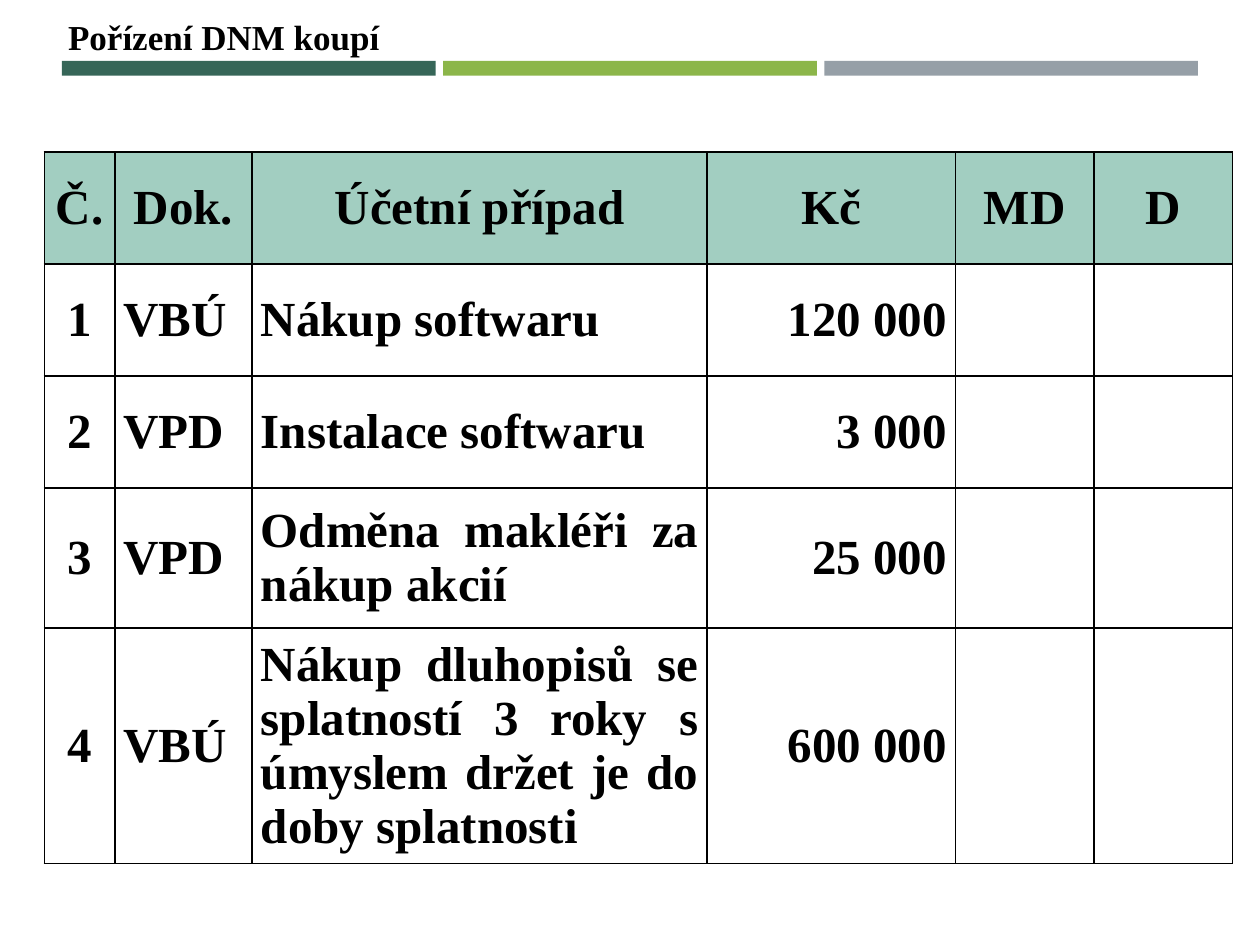
from pptx import Presentation
from pptx import util as u
from pptx.dml.color import RGBColor
from pptx.enum import shapes, text
from pptx.oxml import parse_xml
from pptx.oxml.ns import nsdecls

COLORS = {
    "ink": "000000",
    "header": "A2CEC1",
    "green": "366658",
    "lime": "8CB64A",
    "grey": "969FA7",
}
CENTER, LEFT = text.PP_ALIGN.CENTER, text.PP_ALIGN.LEFT
JUSTIFY, RIGHT = text.PP_ALIGN.JUSTIFY, text.PP_ALIGN.RIGHT

HEADINGS = ["Č.", "Dok.", "Účetní případ", "Kč", "MD", "D"]
ENTRIES = [
    ["1", "VBÚ", "Nákup softwaru", "120 000", "", ""],
    ["2", "VPD", "Instalace softwaru", "3 000", "", ""],
    ["3", "VPD", "Odměna makléři za nákup akcií", "25 000", "", ""],
    ["4", "VBÚ", "Nákup dluhopisů se splatností 3 roky s úmyslem držet je do doby splatnosti",
     "600 000", "", ""],
]
ENTRY_ALIGNS = [CENTER, LEFT, JUSTIFY, RIGHT, CENTER, CENTER]
COLUMN_WIDTHS = [40.3, 78.5, 260, 141.9, 79.2, 79.2]
ROW_HEIGHTS = [64, 64, 64, 80, 134]


def rgb(name):
    return RGBColor.from_string(COLORS[name])


class SlideBuilder:
    def __init__(self, slide, font="Times New Roman"):
        self.slide = slide
        self.font = font

    def add_words(self, paragraph, words, size, align):
        paragraph.alignment = align
        run = paragraph.add_run()
        run.text = words
        run.font.name = self.font
        run.font.size = u.Pt(size)
        run.font.bold = True
        run.font.color.rgb = rgb("ink")

    def title(self, words, left, top, width, height):
        heading = self.slide.shapes.title
        heading.left, heading.top = u.Pt(left), u.Pt(top)
        heading.width, heading.height = u.Pt(width), u.Pt(height)
        frame = heading.text_frame
        frame.word_wrap = False
        frame.auto_size = text.MSO_AUTO_SIZE.SHAPE_TO_FIT_TEXT
        frame.vertical_anchor = text.MSO_ANCHOR.TOP
        self.add_words(frame.paragraphs[0], words, 20, LEFT)

    def bar(self, left, top, width, height, color):
        stripe = self.slide.shapes.add_shape(
            shapes.MSO_SHAPE.RECTANGLE, u.Pt(left), u.Pt(top), u.Pt(width), u.Pt(height))
        stripe.shadow.inherit = False
        stripe.fill.solid()
        stripe.fill.fore_color.rgb = rgb(color)
        stripe.line.fill.background()

    def border(self, cell, width=1):
        """Draw all four sides of a cell; the lines must precede its fill."""
        properties = cell._tc.get_or_add_tcPr()
        for position, side in enumerate("LRTB"):
            properties.insert(position, parse_xml(
                f'<a:ln{side} {nsdecls("a")} w="{u.Pt(width)}"><a:solidFill>'
                f'<a:srgbClr val="{COLORS["ink"]}"/></a:solidFill></a:ln{side}>'))

    def cell(self, cell, words, align, fill=None):
        cell.margin_left = cell.margin_right = u.Pt(5)
        cell.margin_top = cell.margin_bottom = 0
        cell.vertical_anchor = text.MSO_ANCHOR.MIDDLE
        if fill:
            cell.fill.solid()
            cell.fill.fore_color.rgb = rgb(fill)
        else:
            cell.fill.background()
        self.border(cell)
        if words:
            self.add_words(cell.text_frame.paragraphs[0], words, 28, align)

    def table(self, left, top):
        ledger = self.slide.shapes.add_table(
            len(ROW_HEIGHTS), len(COLUMN_WIDTHS), u.Pt(left), u.Pt(top),
            u.Pt(sum(COLUMN_WIDTHS)), u.Pt(sum(ROW_HEIGHTS))).table
        ledger.first_row = ledger.horz_banding = False
        for column, width in zip(ledger.columns, COLUMN_WIDTHS):
            column.width = u.Pt(width)
        for row, height in zip(ledger.rows, ROW_HEIGHTS):
            row.height = u.Pt(height)
        for c, heading in enumerate(HEADINGS):
            self.cell(ledger.cell(0, c), heading, CENTER, "header")
        for r, entry in enumerate(ENTRIES, start=1):
            for c, (words, align) in enumerate(zip(entry, ENTRY_ALIGNS)):
                self.cell(ledger.cell(r, c), words, align)


def main():
    deck = Presentation()
    deck.slide_width, deck.slide_height = u.Pt(720), u.Pt(540)
    builder = SlideBuilder(deck.slides.add_slide(deck.slide_layouts[5]))
    for i, color in enumerate(["green", "lime", "grey"]):
        builder.bar(35.4 + i * 217.8, 34.8, 213.6, 8.4, color)
    builder.title("Pořízení DNM koupí", 31.7, 5, 193.7, 31.7)
    builder.table(25.3, 87)
    deck.save("out.pptx")


if __name__ == "__main__":
    main()
